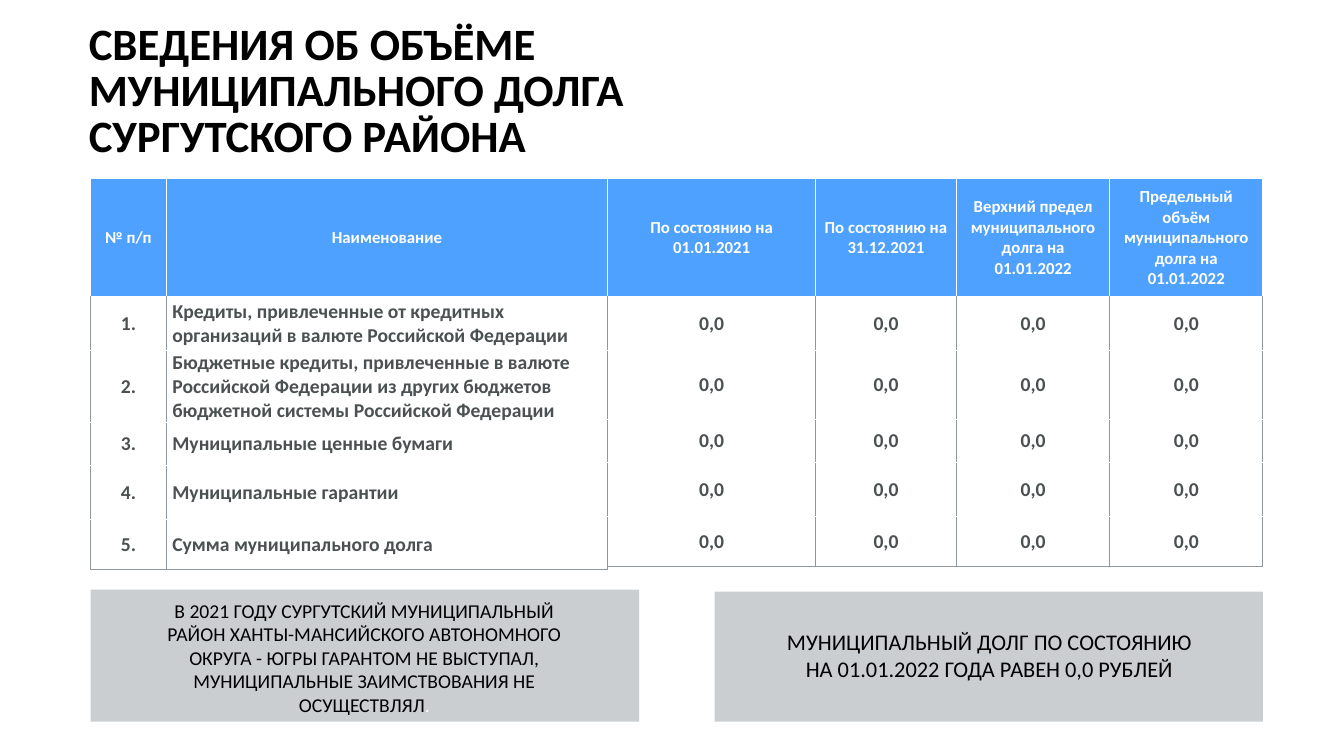
from dataclasses import dataclass

from lxml import etree
from pptx import Presentation
from pptx.dml.color import RGBColor
from pptx.enum.shapes import MSO_SHAPE
from pptx.enum.text import MSO_ANCHOR, MSO_AUTO_SIZE, PP_ALIGN
from pptx.oxml.ns import qn
from pptx.util import Pt

RECT = MSO_SHAPE.RECTANGLE
TOP, MIDDLE = MSO_ANCHOR.TOP, MSO_ANCHOR.MIDDLE
LEFT, CENTER = PP_ALIGN.LEFT, PP_ALIGN.CENTER
NO_FIT = MSO_AUTO_SIZE.NONE
FONT = "Calibri"
COLORS = {
    "black": "000000",
    "white": "FFFFFF",
    "blue": "4EA1FF",
    "ink": "4B5152",
    "line": "8F969C",
    "panel": "CBCED1",
}
HEAD_EDGES = {"lnL": "white", "lnR": "white", "lnT": "blue", "lnB": "blue"}
BODY_EDGES = {"lnL": "line", "lnR": "line", "lnB": "line"}


@dataclass
class Box:
    left: float
    top: float
    width: float
    height: float

    def place(self) -> tuple:
        return Pt(self.left), Pt(self.top), Pt(self.width), Pt(self.height)


@dataclass
class Grid:
    left: float
    cols: list
    rows: list
    cells: list
    aligns: list
    pads: list
    inset: tuple


@dataclass
class Note:
    panel: Box
    box: Box
    text: str
    size: float


def color(name: str) -> RGBColor:
    return RGBColor.from_string(COLORS[name])


def style(par, size: float, ink: str, bold: bool, align) -> None:
    par.alignment = align
    for run in par.runs:
        run.font.name = FONT
        run.font.size = Pt(size)
        run.font.bold = bold
        run.font.color.rgb = color(ink)


def edge(cell, sides: dict) -> None:
    props = cell._tc.get_or_add_tcPr()
    for spot, (side, name) in enumerate(sides.items()):
        line = etree.Element(qn(f"a:{side}"), w=str(Pt(1)))
        fill = etree.SubElement(line, qn("a:solidFill"))
        etree.SubElement(fill, qn("a:srgbClr"), val=COLORS[name])
        props.insert(spot, line)


def draw_title(slide, box: Box, text: str) -> None:
    title = slide.shapes.title
    title.left, title.top, title.width, title.height = box.place()
    frame = title.text_frame
    frame.text = text
    frame.word_wrap = False
    frame.auto_size = NO_FIT
    frame.vertical_anchor = TOP
    for par in frame.paragraphs:
        style(par, 32, "black", True, LEFT)
        par.line_spacing = Pt(33)


def draw_grid(slide, grid: Grid, top: float) -> None:
    box = Box(grid.left, top, sum(grid.cols), sum(grid.rows))
    table = slide.shapes.add_table(
        len(grid.rows), len(grid.cols), *box.place()
    ).table
    table.horz_banding = False
    for col, width in zip(table.columns, grid.cols):
        col.width = Pt(width)
    for row, height in zip(table.rows, grid.rows):
        row.height = Pt(height)
    for r, texts in enumerate(grid.cells):
        head = r == 0
        for c, text in enumerate(texts):
            cell = table.cell(r, c)
            cell.text = text
            cell.vertical_anchor = MIDDLE
            side, end = grid.pads[c] if head else grid.inset
            cell.margin_left = cell.margin_right = Pt(side)
            cell.margin_top = cell.margin_bottom = Pt(end)
            cell.fill.solid()
            cell.fill.fore_color.rgb = color("blue" if head else "white")
            edge(cell, HEAD_EDGES if head else BODY_EDGES)
            style(
                cell.text_frame.paragraphs[0],
                12 if head else 14,
                "white" if head else "ink",
                True,
                CENTER if head else grid.aligns[c],
            )


def draw_note(slide, note: Note) -> None:
    panel = slide.shapes.add_shape(RECT, *note.panel.place())
    panel.shadow.inherit = False
    panel.fill.solid()
    panel.fill.fore_color.rgb = color("panel")
    panel.line.fill.background()
    frame = slide.shapes.add_textbox(*note.box.place()).text_frame
    frame.text = note.text
    frame.word_wrap = True
    for par in frame.paragraphs:
        style(par, note.size, "black", False, CENTER)


TITLE = "СВЕДЕНИЯ ОБ ОБЪЁМЕ\nМУНИЦИПАЛЬНОГО ДОЛГА\nСУРГУТСКОГО РАЙОНА"
NAMES = [
    "Кредиты, привлеченные от кредитных организаций в валюте Российской Федерации",
    "Бюджетные кредиты, привлеченные в валюте Российской Федерации "
    "из других бюджетов бюджетной системы Российской Федерации",
    "Муниципальные ценные бумаги",
    "Муниципальные гарантии",
    "Сумма муниципального долга",
]
HEADS = [
    "По состоянию на 01.01.2021",
    "По состоянию на 31.12.2021",
    "Верхний предел муниципального долга на 01.01.2022",
    "Предельный объём муниципального долга на 01.01.2022",
]
WIDE, SLIM = (7.9, 4.3), (4.3, 0)
GRIDS = [
    Grid(
        64.8, [54, 315.4], [83.5, 38.9, 50.4, 31, 38.2, 36],
        [["№ п/п", "Наименование"]]
        + [[f"{n}.", name] for n, name in enumerate(NAMES, 1)],
        [CENTER, LEFT], [WIDE] * 2, SLIM,
    ),
    Grid(
        434.2, [148.3, 100.8, 109.4, 109.4], [83.5, 38.9, 49, 31, 38.2, 36],
        [HEADS] + [["0,0"] * len(HEADS) for _ in NAMES],
        [CENTER] * 4, [WIDE] + [SLIM] * 3, WIDE,
    ),
]
NOTES = [
    Note(
        Box(510.5, 422.6, 391.7, 92.9), Box(529.2, 445, 355, 46),
        "МУНИЦИПАЛЬНЫЙ ДОЛГ ПО СОСТОЯНИЮ\nНА 01.01.2022 ГОДА РАВЕН 0,0 РУБЛЕЙ",
        16,
    ),
    Note(
        Box(64.8, 421.2, 391.7, 94.3), Box(102.2, 424.1, 316.1, 92.2),
        "В 2021 ГОДУ СУРГУТСКИЙ МУНИЦИПАЛЬНЫЙ РАЙОН ХАНТЫ-МАНСИЙСКОГО "
        "АВТОНОМНОГО ОКРУГА - ЮГРЫ ГАРАНТОМ НЕ ВЫСТУПАЛ, "
        "МУНИЦИПАЛЬНЫЕ ЗАИМСТВОВАНИЯ НЕ ОСУЩЕСТВЛЯЛ",
        14,
    ),
]


def main() -> None:
    deck = Presentation()
    deck.slide_width, deck.slide_height = Pt(960), Pt(540)
    slide = deck.slides.add_slide(deck.slide_layouts[5])
    draw_title(slide, Box(56.2, 13, 407.5, 107.3), TITLE)
    for grid in GRIDS:
        draw_grid(slide, grid, 128.2)
    for note in NOTES:
        draw_note(slide, note)
    end = slide.shapes[-1].text_frame.paragraphs[0].add_run()
    end.text = "."
    end.font.name = FONT
    end.font.size = Pt(14)
    end.font.color.rgb = color("white")
    deck.save("out.pptx")


if __name__ == "__main__":
    main()
